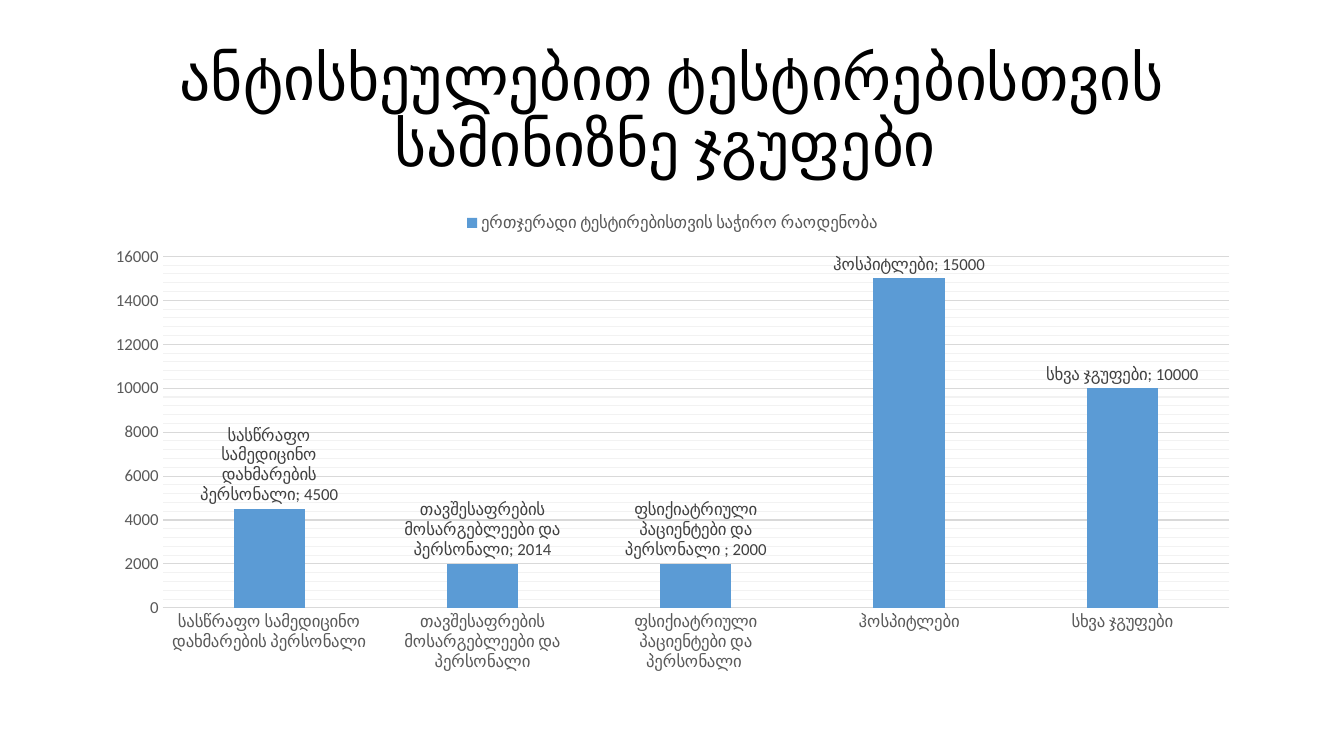
"""Build a slide with a column chart of target groups for antibody testing."""
from copy import deepcopy

from lxml import etree
from pptx import Presentation
from pptx.chart.data import CategoryChartData
from pptx.dml.color import RGBColor
from pptx.enum.chart import XL_CHART_TYPE, XL_LABEL_POSITION, XL_LEGEND_POSITION, XL_TICK_MARK
from pptx.enum.text import MSO_ANCHOR, PP_ALIGN
from pptx.oxml.ns import qn
from pptx.util import Inches, Pt

COLUMN = XL_CHART_TYPE.COLUMN_CLUSTERED
ABOVE = XL_LABEL_POSITION.OUTSIDE_END
TOP = XL_LEGEND_POSITION.TOP
NO_TICK = XL_TICK_MARK.NONE
MIDDLE = MSO_ANCHOR.MIDDLE
CENTER = PP_ALIGN.CENTER

TITLE = "ანტისხეულებით ტესტირებისთვის სამინიზნე ჯგუფები "
SERIES = "ერთჯერადი ტესტირებისთვის საჭირო რაოდენობა"
GROUPS = [
    ("სასწრაფო სამედიცინო დახმარების პერსონალი", 4500),
    ("თავშესაფრების მოსარგებლეები და პერსონალი", 2014),
    ("ფსიქიატრიული პაციენტები და პერსონალი ", 2000),
    ("ჰოსპიტლები", 15000),
    ("სხვა ჯგუფები", 10000),
]
THEME = {
    "font": "Calibri", "title": 44, "body": 12, "line": 0.75,
    "black": "000000", "axis": "595959", "label": "404040",
    "grid": "D9D9D9", "minor": "F2F2F2", "bar": "5B9BD5",
}
LEFT, WIDTH = Inches(0.92), Inches(11.5)


def color(name):
    return RGBColor.from_string(THEME[name])


def style(font, size, tone):
    font.name = THEME["font"]
    font.size = Pt(THEME[size])
    font.bold = False
    font.color.rgb = color(tone)


def rule(line, tone):
    line.color.rgb = color(tone)
    line.width = Pt(THEME["line"])


def add_title(slide):
    box = slide.shapes.add_textbox(LEFT, Inches(0.4), WIDTH, Inches(1.45))
    frame = box.text_frame
    frame.word_wrap = True
    frame.vertical_anchor = MIDDLE
    frame.text = TITLE
    para = frame.paragraphs[0]
    para.alignment = CENTER
    para.line_spacing = 0.9
    style(para.runs[0].font, "title", "black")


def style_grid(axis):
    axis.has_major_gridlines = axis.has_minor_gridlines = True
    line = axis.major_gridlines.format.line
    rule(line, "minor")
    major = axis._element.find(qn("c:majorGridlines"))
    minor = axis._element.find(qn("c:minorGridlines"))
    minor.append(deepcopy(major.find(qn("c:spPr"))))
    rule(line, "grid")


def style_axes(chart):
    cat, val = chart.category_axis, chart.value_axis
    for axis in (cat, val):
        axis.major_tick_mark = axis.minor_tick_mark = NO_TICK
        style(axis.tick_labels.font, "body", "axis")
    rule(cat.format.line, "grid")
    val.format.line.fill.background()
    val.minimum_scale, val.maximum_scale, val.major_unit = 0, 16000, 2000
    val.minor_unit = 400
    style_grid(val)


def style_bars(plot):
    plot.gap_width = 199
    plot.vary_by_categories = False
    bars = plot.series[0]
    bars.format.fill.solid()
    bars.format.fill.fore_color.rgb = color("bar")
    labels = bars.data_labels
    labels.show_value = labels.show_category_name = True
    labels.position = ABOVE
    style(labels.font, "body", "label")
    mark = etree.Element(qn("c:separator"))
    mark.text = "; "
    bars._element.find(".//" + qn("c:showBubbleSize")).addnext(mark)


def add_chart(slide):
    data = CategoryChartData()
    data.categories = [name for name, _ in GROUPS]
    data.add_series(SERIES, [count for _, count in GROUPS])
    chart = slide.shapes.add_chart(
        COLUMN, LEFT, Inches(2), WIDTH, Inches(4.76), data).chart
    style(chart.font, "body", "axis")
    chart.has_title = False
    chart.has_legend = True
    chart.legend.position = TOP
    chart.legend.include_in_layout = False
    style(chart.legend.font, "body", "axis")
    style_axes(chart)
    style_bars(chart.plots[0])


def main():
    deck = Presentation()
    deck.slide_width, deck.slide_height = Inches(13.33), Inches(7.5)
    slide = deck.slides.add_slide(deck.slide_layouts[6])
    add_title(slide)
    add_chart(slide)
    deck.save("out.pptx")


if __name__ == "__main__":
    main()
